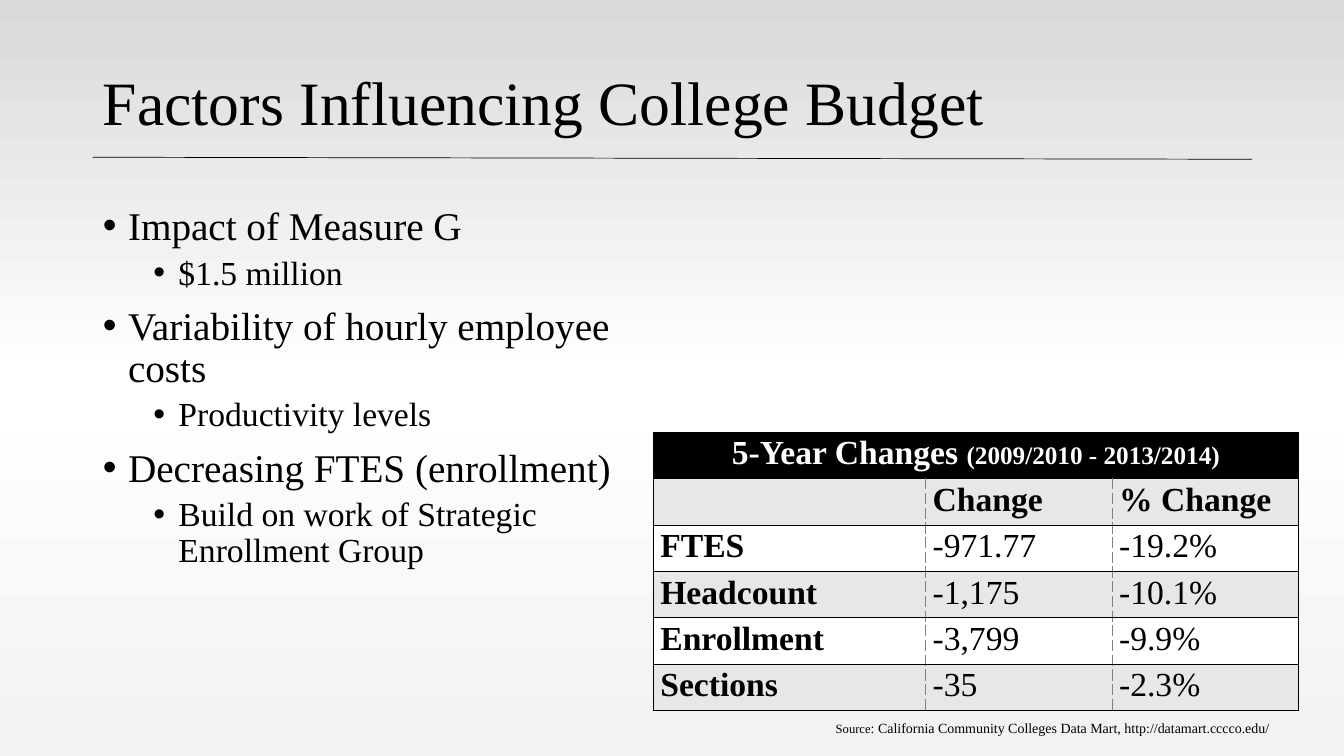
from copy import deepcopy

from lxml import etree
from pptx import Presentation
from pptx.dml.color import RGBColor
from pptx.enum.shapes import MSO_CONNECTOR
from pptx.enum.text import MSO_ANCHOR, MSO_AUTO_SIZE, PP_ALIGN
from pptx.oxml.ns import qn
from pptx.util import Inches, Pt

FONT = "Times New Roman"
COLORS = {"ink": "000000", "white": "FFFFFF", "band": "E7E7E7", "divider": "808080"}
BACKGROUND = [(0, "D9D9D9"), (0.5, "FFFFFF"), (1, "F2F2F2")]

TITLE = "Factors Influencing College Budget"
FACTORS = [
    ("Impact of Measure G", "$1.5 million"),
    ("Variability of hourly employee costs", "Productivity levels"),
    ("Decreasing FTES (enrollment)", "Build on work of Strategic Enrollment Group"),
]
# Per bullet level: text size, left margin in inches, space before
LEVELS = [(28, 0.25, 10), (24, 0.75, 5)]

CAPTION = [("5-Year Changes ", 24), ("(2009/2010 - 2013/2014)", 18)]
CHANGES = [
    ("", "Change", "% Change"),
    ("FTES", "-971.77", "-19.2%"),
    ("Headcount", "-1,175", "-10.1%"),
    ("Enrollment", "-3,799", "-9.9%"),
    ("Sections", "-35", "-2.3%"),
]
COLUMN_WIDTHS = [2.7, 1.85, 1.85]
ROW_HEIGHT = 0.46
SOURCE = [("Source", 9),
          (": California Community Colleges Data Mart, http://datamart.cccco.edu/", 10)]


def rgb(name):
    return RGBColor.from_string(COLORS[name])


def place(shape, left, top, width, height):
    shape.left, shape.top = Inches(left), Inches(top)
    shape.width, shape.height = Inches(width), Inches(height)


def add_run(paragraph, text, size, color="ink", bold=False):
    run = paragraph.add_run()
    run.text = text
    run.font.name = FONT
    run.font.size = Pt(size)
    run.font.bold = bold
    run.font.color.rgb = rgb(color)


def paint_background(slide):
    fill = slide.background.fill
    fill.gradient()
    fill.gradient_angle = 270
    stop_list = slide.element.find(".//" + qn("a:gsLst"))
    stop_list.append(deepcopy(stop_list[0]))
    for stop, (position, color) in zip(fill.gradient_stops, BACKGROUND):
        stop.position = position
        stop.color.rgb = RGBColor.from_string(color)


def add_rule(slide):
    rule = slide.shapes.add_connector(
        MSO_CONNECTOR.STRAIGHT, Inches(0.92), Inches(1.56), Inches(12.42), Inches(1.58))
    rule.line.color.rgb = rgb("ink")
    rule.line.width = Pt(0.5)
    etree.SubElement(rule.line._get_or_add_ln().getparent(), qn("a:effectLst"))


def fill_title(title):
    place(title, 0.92, 0.4, 11.5, 1.29)
    frame = title.text_frame
    frame.auto_size = MSO_AUTO_SIZE.NONE
    frame.vertical_anchor = MSO_ANCHOR.MIDDLE
    heading = frame.paragraphs[0]
    heading.alignment = PP_ALIGN.LEFT
    heading.line_spacing = 0.9
    add_run(heading, TITLE, 44)


def fill_factors(body):
    place(body, 0.92, 2, 5.91, 4.76)
    frame = body.text_frame
    frame.auto_size = MSO_AUTO_SIZE.NONE
    bullets = [(level, text) for factor in FACTORS for level, text in enumerate(factor)]
    for index, (level, text) in enumerate(bullets):
        bullet = frame.add_paragraph() if index else frame.paragraphs[0]
        size, margin, space = LEVELS[level]
        bullet.level = level
        bullet.line_spacing = 0.9
        bullet.space_before = Pt(space)
        add_run(bullet, text, size)
        properties = bullet._p.get_or_add_pPr()
        properties.set("marL", str(Inches(margin)))
        properties.set("indent", str(Inches(-0.25)))
        etree.SubElement(properties, qn("a:buFont"), typeface="Arial")
        etree.SubElement(properties, qn("a:buChar"), char="•")


def set_borders(cell, dashed_sides):
    properties = cell._tc.get_or_add_tcPr()
    for index, side in enumerate("LRTB"):
        dashed = side in dashed_sides
        line = etree.Element(qn(f"a:ln{side}"), w=str(Pt(1)))
        fill = etree.SubElement(line, qn("a:solidFill"))
        etree.SubElement(fill, qn("a:srgbClr"), val=COLORS["divider" if dashed else "ink"])
        etree.SubElement(line, qn("a:prstDash"), val="sysDash" if dashed else "solid")
        properties.insert(index, line)


def format_cell(cell, fill, dashed_sides=""):
    cell.fill.solid()
    cell.fill.fore_color.rgb = rgb(fill)
    cell.margin_left = cell.margin_right = Inches(0.07)
    cell.margin_top = cell.margin_bottom = 0
    cell.text_frame.paragraphs[0].line_spacing = 1.07
    set_borders(cell, dashed_sides)


def add_changes_table(slide):
    row_count, column_count = len(CHANGES) + 1, len(COLUMN_WIDTHS)
    table = slide.shapes.add_table(
        row_count, column_count, Inches(6.48), Inches(4.29),
        Inches(sum(COLUMN_WIDTHS)), Inches(ROW_HEIGHT * row_count)).table
    table.first_row = table.horz_banding = False
    for column, width in zip(table.columns, COLUMN_WIDTHS):
        column.width = Inches(width)
    for row in table.rows:
        row.height = Inches(ROW_HEIGHT)

    caption = table.cell(0, 0)
    caption.merge(table.cell(0, column_count - 1))
    for c in range(column_count):
        format_cell(table.cell(0, c), "ink")
    caption_line = caption.text_frame.paragraphs[0]
    caption_line.alignment = PP_ALIGN.CENTER
    for text, size in CAPTION:
        add_run(caption_line, text, size, "white", bold=True)

    dashed_by_column = ["R", "LR", "L"]
    for r, values in enumerate(CHANGES, start=1):
        for c, value in enumerate(values):
            cell = table.cell(r, c)
            format_cell(cell, "band" if r % 2 else "white", dashed_by_column[c])
            if value:
                add_run(cell.text_frame.paragraphs[0], value, 24, bold=r == 1 or c == 0)


def add_source(slide):
    box = slide.shapes.add_textbox(Inches(8.19), Inches(7.09), Inches(4.65), Inches(0.28))
    box.text_frame.word_wrap = True
    box.text_frame.auto_size = MSO_AUTO_SIZE.SHAPE_TO_FIT_TEXT
    for text, size in SOURCE:
        add_run(box.text_frame.paragraphs[0], text, size)


def main():
    deck = Presentation()
    deck.slide_width, deck.slide_height = Inches(13.33), Inches(7.5)
    slide = deck.slides.add_slide(deck.slide_layouts[1])
    paint_background(slide)
    add_rule(slide)
    fill_title(slide.shapes.title)
    fill_factors(slide.placeholders[1])
    add_changes_table(slide)
    add_source(slide)
    deck.save("out.pptx")


if __name__ == "__main__":
    main()
